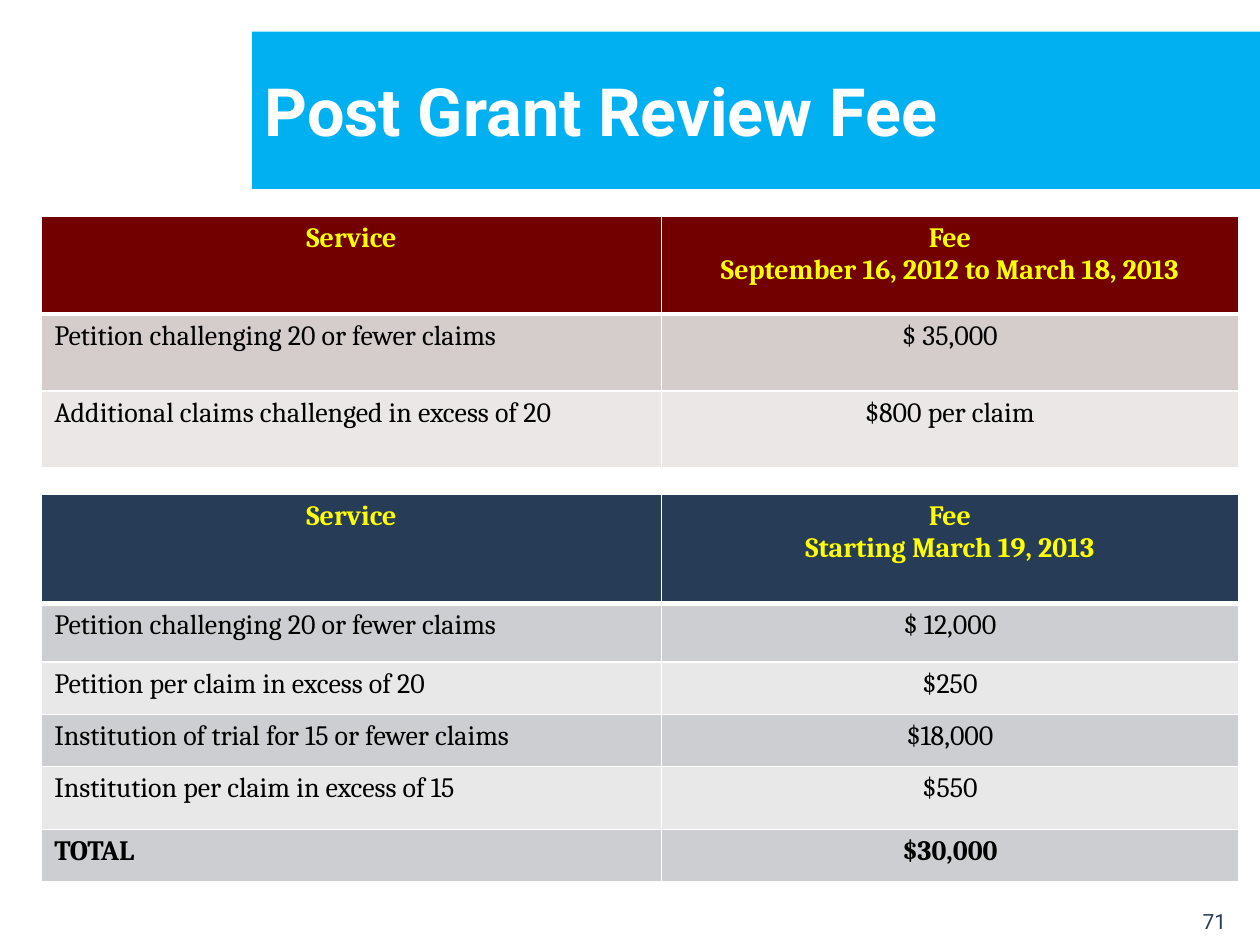
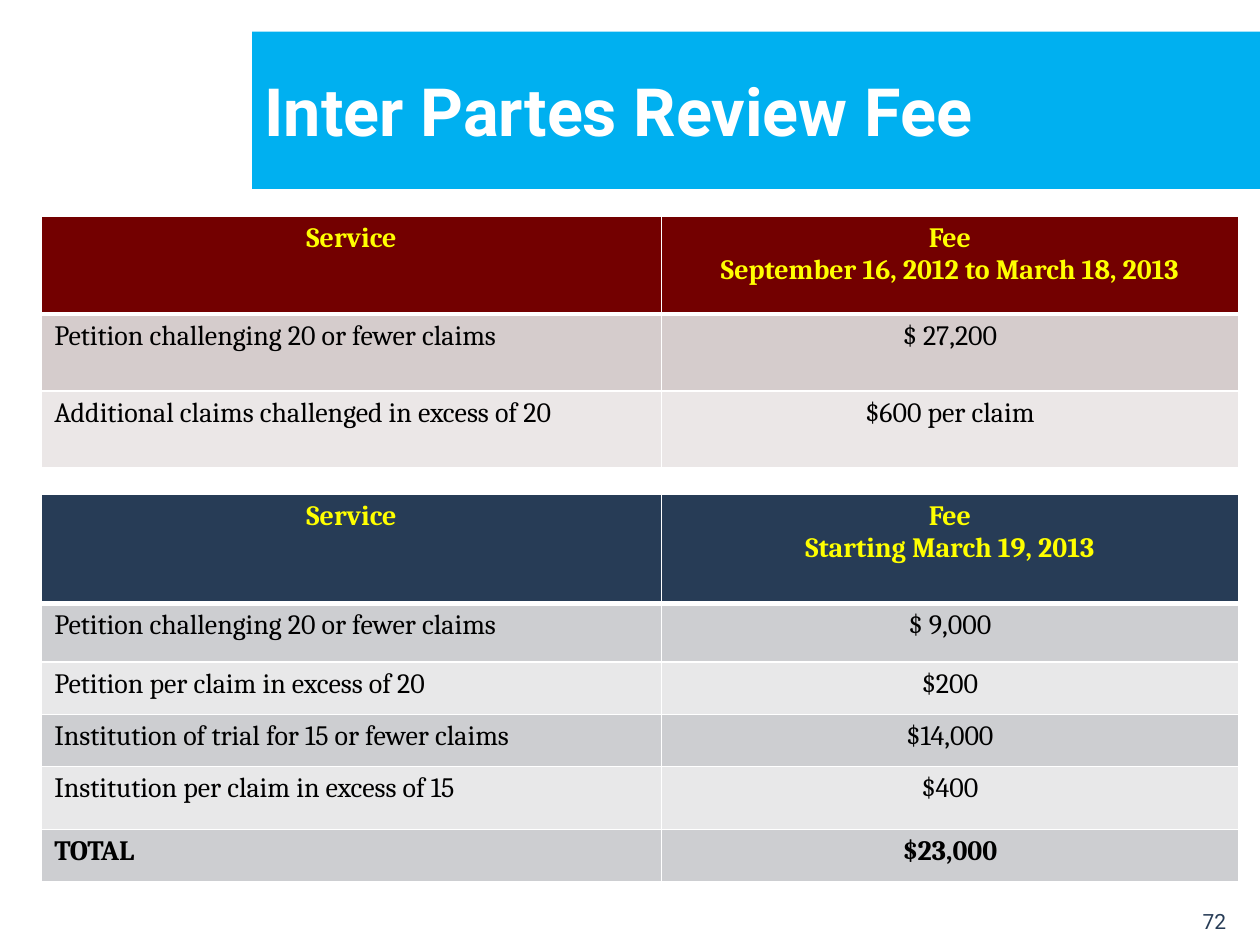
import dataclasses

import pptx
import pptx.dml.color
import pptx.enum.text
import pptx.oxml
import pptx.oxml.ns
import pptx.util

Cm = pptx.util.Cm
Pt = pptx.util.Pt
Align = pptx.enum.text.PP_ALIGN
Anchor = pptx.enum.text.MSO_ANCHOR


@dataclasses.dataclass(frozen=True)
class Theme:
    """Colours, fonts and type sizes shared by the slides."""
    band: str = "00B0F0"
    white: str = "FFFFFF"
    black: str = "000000"
    navy: str = "273C56"
    maroon: str = "730000"
    yellow: str = "FFFF00"
    maroon_rows: tuple = ("D5CCCC", "EBE7E7")
    navy_rows: tuple = ("CDCED1", "E8E8E9")
    sans: str = "Roboto"
    serif: str = "Cambria"
    title_size: int = 38
    table_size: int = 16
    number_size: int = 12
    rule: int = 1
    header_rule: int = 3


THEME = Theme()
TABLE_LEFT = 0.84
COLUMN_WIDTHS = (12.49, 11.64)

# Rows of each schedule: heights in cm and service names
EARLY = {
    "top": 4.35,
    "period": "September 16, 2012 to March 18, 2013",
    "heights": (1.98, 1.55, 1.55),
    "header_fill": THEME.maroon,
    "row_fills": THEME.maroon_rows,
    "services": ("Petition challenging 20 or fewer claims",
                 "Additional claims challenged in excess of 20"),
}
LATER = {
    "top": 9.96,
    "period": "Starting March 19, 2013",
    "heights": (2.2, 1.19, 1.05, 1.05, 1.27, 1.05),
    "header_fill": THEME.navy,
    "row_fills": THEME.navy_rows,
    "services": ("Petition challenging 20 or fewer claims",
                 "Petition per claim in excess of 20",
                 "Institution of trial for 15 or fewer claims",
                 "Institution per claim in excess of 15",
                 "TOTAL"),
}

REVIEWS = (
    ("Post Grant Review Fee", 71,
     ("$ 35,000", "$800 per claim"),
     ("$ 12,000", "$250", "$18,000", "$550", "$30,000")),
    ("Inter Partes Review Fee", 72,
     ("$ 27,200", "$600 per claim"),
     ("$ 9,000", "$200", "$14,000", "$400", "$23,000")),
)


def rgb(value):
    return pptx.dml.color.RGBColor.from_string(value)


def apply_formats(target, formats):
    for name, value in formats.items():
        setattr(target, name, value)


def write(frame, lines, align, color, **font_formats):
    """Put one paragraph per line into a text frame."""
    frame.text = "\n".join(lines)
    for paragraph in frame.paragraphs:
        paragraph.alignment = align
        apply_formats(paragraph.font, font_formats)
        paragraph.font.color.rgb = rgb(color)


def add_title(slide, wording):
    title = slide.shapes.title
    apply_formats(title, {"left": Cm(5.08), "top": Cm(0.64),
                          "width": Cm(20.32), "height": Cm(3.17)})
    title.fill.solid()
    title.fill.fore_color.rgb = rgb(THEME.band)
    write(title.text_frame, [wording], Align.LEFT, THEME.white,
          name=THEME.sans, size=Pt(THEME.title_size), bold=True)
    apply_formats(title.text_frame, {
        "vertical_anchor": Anchor.MIDDLE, "word_wrap": True,
        "auto_size": pptx.enum.text.MSO_AUTO_SIZE.NONE})


def add_page_number(slide, number):
    frame = slide.shapes.add_textbox(Cm(19.69), Cm(17.58), Cm(5.28), Cm(1.27)).text_frame
    apply_formats(frame, {"word_wrap": True, "vertical_anchor": Anchor.BOTTOM,
                          "margin_bottom": Cm(0.03)})
    write(frame, [str(number)], Align.RIGHT, THEME.navy,
          name=THEME.sans, size=Pt(THEME.number_size))


def set_borders(cell, top, bottom):
    """Draw white cell borders; widths in points."""
    widths = {"L": THEME.rule, "R": THEME.rule, "T": top, "B": bottom}
    properties = cell._tc.get_or_add_tcPr()
    for position, (side, width) in enumerate(widths.items()):
        properties.insert(position, pptx.oxml.parse_xml(
            f'<a:ln{side} {pptx.oxml.ns.nsdecls("a")} w="{Pt(width)}">'
            f'<a:solidFill><a:srgbClr val="{THEME.white}"/></a:solidFill>'
            f'</a:ln{side}>'))


def fill_cell(cell, lines, fill, align, color, bold, top, bottom):
    cell.fill.solid()
    cell.fill.fore_color.rgb = rgb(fill)
    write(cell.text_frame, lines, align, color,
          name=THEME.serif, size=Pt(THEME.table_size), bold=bold)
    set_borders(cell, top, bottom)


def add_fee_table(slide, schedule, fees):
    heights = schedule["heights"]
    table = slide.shapes.add_table(
        len(heights), len(COLUMN_WIDTHS), Cm(TABLE_LEFT), Cm(schedule["top"]),
        Cm(sum(COLUMN_WIDTHS)), Cm(sum(heights))).table
    table.horz_banding = False
    for column, width in zip(table.columns, COLUMN_WIDTHS):
        column.width = Cm(width)
    for row, height in zip(table.rows, heights):
        row.height = Cm(height)

    # Header row
    for cell, lines in zip(table.rows[0].cells, (["Service"], ["Fee", schedule["period"]])):
        fill_cell(cell, lines, schedule["header_fill"], Align.CENTER,
                  THEME.yellow, True, THEME.rule, THEME.header_rule)

    # Service rows in alternating tints
    for index, service_fee in enumerate(zip(schedule["services"], fees)):
        fill = schedule["row_fills"][index % 2]
        top = THEME.rule if index else THEME.header_rule
        bold = service_fee[0] == "TOTAL"
        for cell, wording, align in zip(table.rows[index + 1].cells, service_fee,
                                        (Align.LEFT, Align.CENTER)):
            fill_cell(cell, [wording], fill, align, THEME.black, bold, top, THEME.rule)


def main():
    deck = pptx.Presentation()
    apply_formats(deck, {"slide_width": Cm(25.4), "slide_height": Cm(19.05)})
    title_only = deck.slide_layouts.get_by_name("Title Only")
    for wording, number, early_fees, later_fees in REVIEWS:
        slide = deck.slides.add_slide(title_only)
        add_title(slide, wording)
        add_fee_table(slide, EARLY, early_fees)
        add_page_number(slide, number)
        add_fee_table(slide, LATER, later_fees)
    deck.save("out.pptx")


if __name__ == "__main__":
    main()
